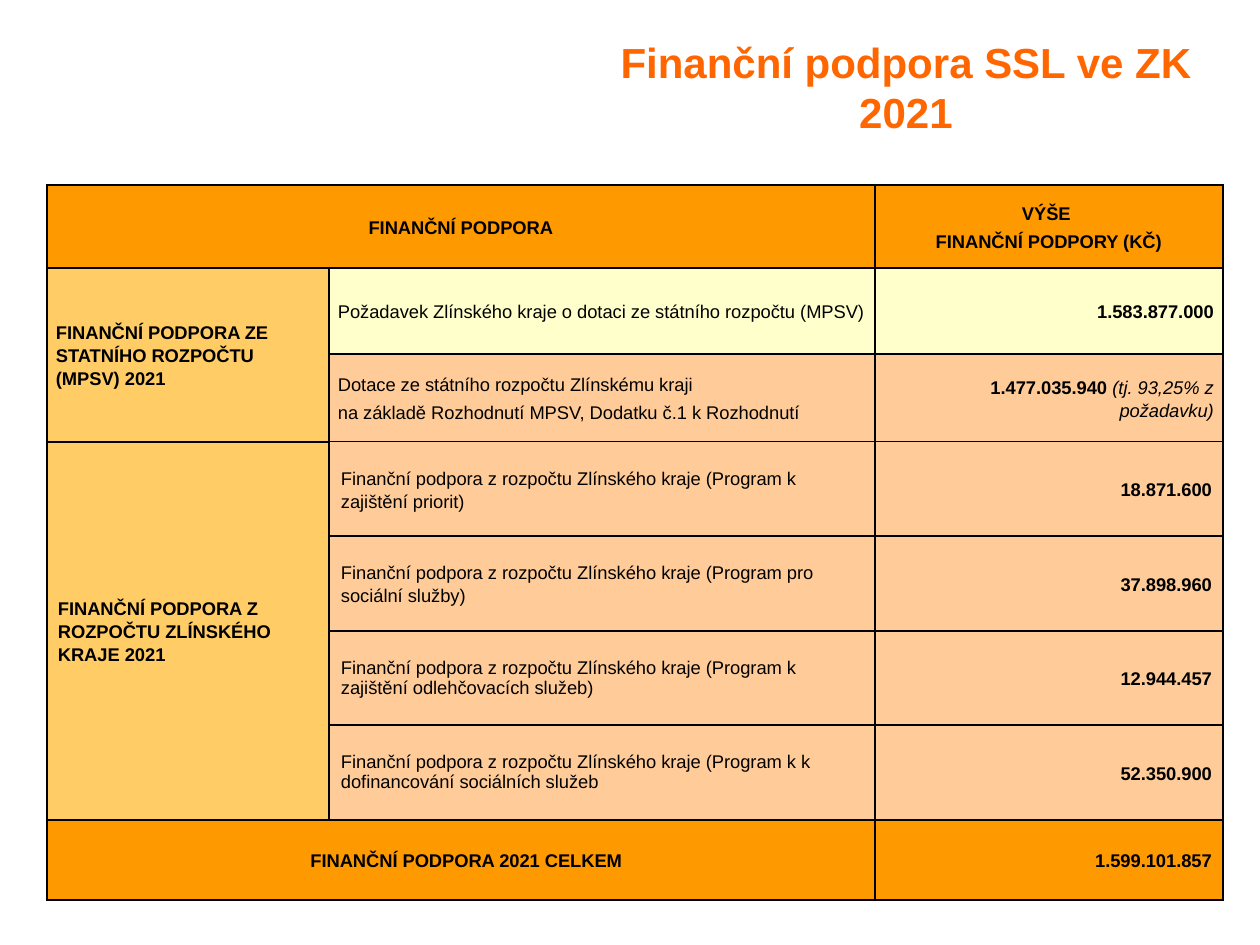
from lxml import etree
from pptx import Presentation
from pptx import util as u
from pptx.dml.color import RGBColor
from pptx.enum import text
from pptx.oxml import ns

PX = 914400 / 126
COLORS = {"title": "FF6600", "ink": "000000", "band": "FF9900",
          "group": "FFCC66", "request": "FFFFCC", "grant": "FFCC99"}
LEFT, CENTER, RIGHT = text.PP_ALIGN.LEFT, text.PP_ALIGN.CENTER, text.PP_ALIGN.RIGHT


def px(length):
    return u.Emu(round(length * PX))


def style(span, size, color, bold, italic=False):
    font = span.font
    font.name, font.size, font.bold, font.italic = "Arial", u.Pt(size), bold, italic
    font.color.rgb = RGBColor.from_string(COLORS[color])


deck = Presentation()
deck.slide_width, deck.slide_height = px(1260), px(945)
page = deck.slides.add_slide(deck.slide_layouts[6])

title = page.shapes.add_textbox(px(591), px(4), px(630), px(165)).text_frame
title.word_wrap = True
title.vertical_anchor = text.MSO_ANCHOR.MIDDLE
title.text = "Finanční podpora SSL ve ZK 2021"
title.paragraphs[0].alignment = CENTER
style(title.paragraphs[0].runs[0], 24, "title", True)

# Table grid
widths = [282, 546, 348]
heights = [83, 86, 88, 94, 95, 94, 95, 80]
frame = page.shapes.add_table(len(heights), len(widths), px(47), px(185),
                              px(sum(widths)), px(sum(heights)))
table = frame.table
table.first_row = table.horz_banding = False
for column, width in zip(table.columns, widths):
    column.width = px(width)
for row, height in zip(table.rows, heights):
    row.height = px(height)
for first, last in [((0, 0), (0, 1)), ((1, 0), (2, 0)), ((3, 0), (6, 0)), ((7, 0), (7, 1))]:
    table.cell(*first).merge(table.cell(*last))

# Row, column, fill, alignment, bold, lines
support = "Finanční podpora z rozpočtu Zlínského kraje (Program "
cells = [
    (0, 0, "band", CENTER, True, ["FINANČNÍ PODPORA"]),
    (0, 2, "band", CENTER, True, ["VÝŠE ", "FINANČNÍ PODPORY (KČ)"]),
    (1, 0, "group", LEFT, True, ["FINANČNÍ PODPORA ZE STATNÍHO ROZPOČTU (MPSV) 2021"]),
    (1, 1, "request", LEFT, False,
     ["Požadavek Zlínského kraje o dotaci ze státního rozpočtu (MPSV)"]),
    (1, 2, "request", RIGHT, True, ["1.583.877.000"]),
    (2, 1, "grant", LEFT, False, ["Dotace ze státního rozpočtu Zlínskému kraji",
                                  "na základě Rozhodnutí MPSV, Dodatku č.1 k Rozhodnutí"]),
    (2, 2, "grant", RIGHT, True, ["1.477.035.940 "]),
    (3, 0, "group", LEFT, True, ["FINANČNÍ PODPORA Z ROZPOČTU ZLÍNSKÉHO KRAJE 2021"]),
    (7, 0, "band", CENTER, True, ["FINANČNÍ PODPORA 2021 CELKEM"]),
    (7, 2, "band", RIGHT, True, ["1.599.101.857"]),
]
programs = [("k zajištění priorit)", "18.871.600"),
            ("pro sociální služby)", "37.898.960"),
            ("k zajištění odlehčovacích služeb)", "12.944.457"),
            ("k k dofinancování sociálních služeb", "52.350.900")]
for row, (program, amount) in enumerate(programs, 3):
    cells.append((row, 1, "grant", LEFT, False, [support + program]))
    cells.append((row, 2, "grant", RIGHT, True, [amount]))

for row, column, fill, align, bold, lines in cells:
    cell = table.cell(row, column)
    cell.fill.solid()
    cell.fill.fore_color.rgb = RGBColor.from_string(COLORS[fill])
    cell.vertical_anchor = text.MSO_ANCHOR.MIDDLE
    cell.margin_top = cell.margin_bottom = 0
    pads = (9, 9) if row < 3 else (11, 0) if column == 0 else (0, 11)
    cell.margin_left, cell.margin_right = map(px, pads)
    cell.text_frame.text = "\n".join(lines)
    for para in cell.text_frame.paragraphs:
        para.alignment = align
        if (row, column) not in [(5, 1), (6, 1)]:
            para.line_spacing, para.space_after = 1.14, u.Pt(3)
        if (row, column) == (2, 2) or (column == 1 and row > 2):
            para._p.get_or_add_pPr().set("marL", str(px(12)))
        style(para.runs[0], 10.5, "ink", bold)

share = table.cell(2, 2).text_frame.paragraphs[0].add_run()
share.text = "(tj. 93,25% z požadavku)"
style(share, 10.5, "ink", False, True)

# Cell borders, thinner between the state grant and the regional programs
for row in range(len(heights)):
    for column in range(len(widths)):
        properties = table.cell(row, column)._tc.get_or_add_tcPr()
        for place, side in enumerate(["lnL", "lnR", "lnT", "lnB"]):
            thin = column > 0 and (row, side) in [(2, "lnB"), (3, "lnT")]
            line = etree.Element(ns.qn("a:" + side), w=str(u.Pt(0.5 if thin else 1.5)))
            paint = etree.SubElement(line, ns.qn("a:solidFill"))
            etree.SubElement(paint, ns.qn("a:srgbClr"), val=COLORS["ink"])
            properties.insert(place, line)

deck.save("out.pptx")
